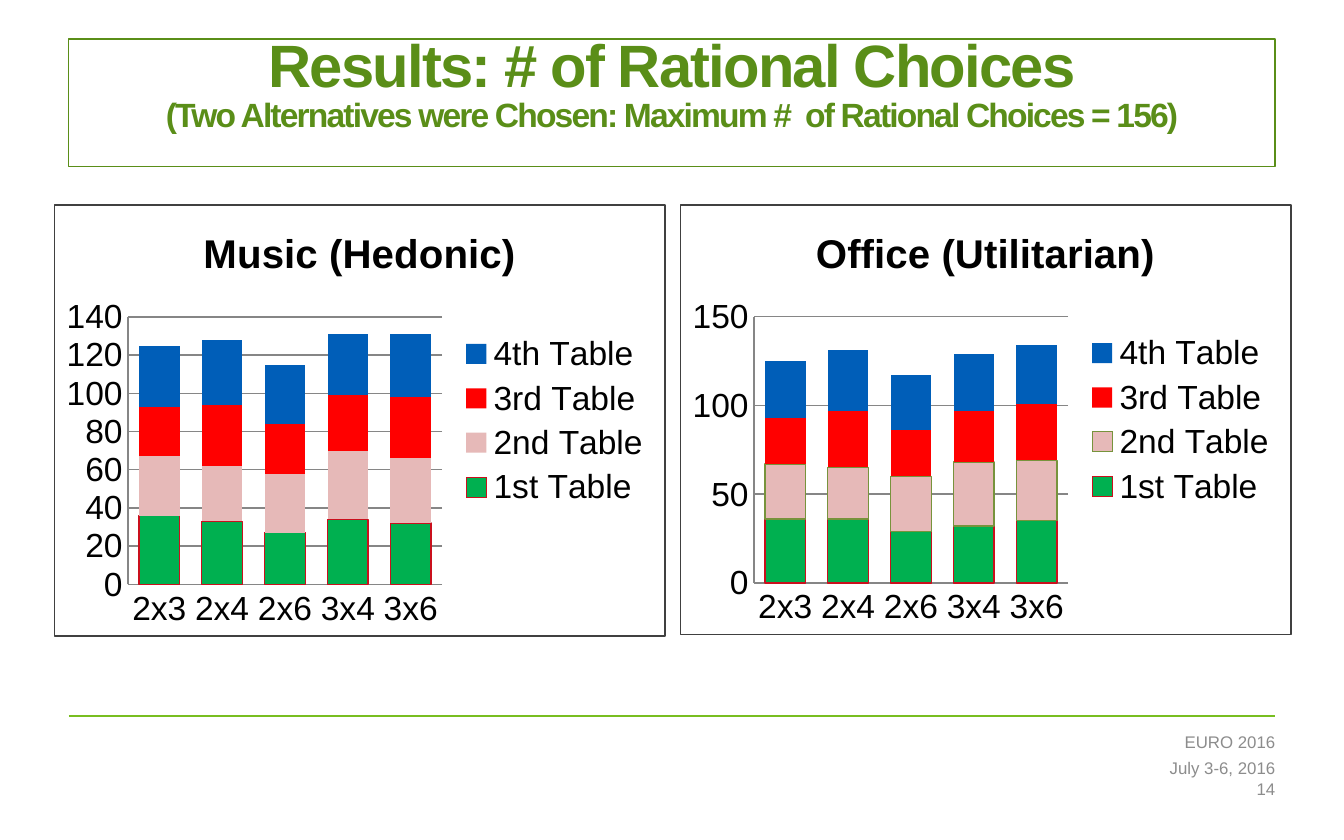
from lxml import etree
from pptx import Presentation
from pptx.chart.data import CategoryChartData
from pptx.dml.color import RGBColor
from pptx.enum.chart import XL_CHART_TYPE, XL_LEGEND_POSITION, XL_TICK_MARK
from pptx.enum.shapes import MSO_CONNECTOR
from pptx.enum.text import MSO_ANCHOR, MSO_AUTO_SIZE, PP_ALIGN
from pptx.oxml import parse_xml
from pptx.oxml.ns import nsdecls, qn
from pptx.util import Cm, Pt

STACKED = XL_CHART_TYPE.COLUMN_STACKED
LEGEND_RIGHT = XL_LEGEND_POSITION.RIGHT
NO_TICK = XL_TICK_MARK.NONE
STRAIGHT = MSO_CONNECTOR.STRAIGHT
TOP, MIDDLE = MSO_ANCHOR.TOP, MSO_ANCHOR.MIDDLE
NO_FIT = MSO_AUTO_SIZE.NONE
CENTER, RIGHT = PP_ALIGN.CENTER, PP_ALIGN.RIGHT

FONT = "Arial"
COLORS = {
    "title": "5A8E18", "rule": "78BE20", "footer": "8C8C8C", "text": "000000",
    "border": "404040", "grid": "868686", "first": "00B050", "second": "E6B9B8",
    "third": "FF0000", "fourth": "005EB8", "first_line": "CA101D",
    "second_line": "77933C",
}
SIZES = ["2x3", "2x4", "2x6", "3x4", "3x6"]
# The later three tables gave the same counts for both products
LATER_TABLES = [
    ("2nd Table", [31, 29, 31, 36, 34], "second"),
    ("3rd Table", [26, 32, 26, 29, 32], "third"),
    ("4th Table", [32, 34, 31, 32, 33], "fourth"),
]


def color(name):
    return RGBColor.from_string(COLORS[name])


def style_font(font, size, color_name, bold=False):
    font.name = FONT
    font.size = Pt(size)
    font.bold = bold
    font.color.rgb = color(color_name)


def style_line(line, color_name, width=0.75):
    line.color.rgb = color(color_name)
    line.width = Pt(width)


def add_title(slide, left, top, width, height):
    title = slide.shapes.title
    title.left, title.top = Cm(left), Cm(top)
    title.width, title.height = Cm(width), Cm(height)
    style_line(title.line, "title")
    frame = title.text_frame
    frame.auto_size = NO_FIT
    frame.word_wrap = True
    frame.vertical_anchor = TOP
    frame.margin_left = frame.margin_right = 0
    frame.margin_top = frame.margin_bottom = 0
    paragraph = frame.paragraphs[0]
    paragraph.alignment = CENTER
    paragraph.line_spacing = 0.85
    lines = [("Results: # of Rational Choices", 32),
             ("(Two Alternatives were Chosen: Maximum #  of Rational Choices = 156)", 18)]
    for index, (text, size) in enumerate(lines):
        if index:
            paragraph.add_line_break()
        run = paragraph.add_run()
        run.text = text
        style_font(run.font, size, "title", bold=True)
        run.font._element.set("spc", "-100")


def set_plot_area(chart, x, y, width, height):
    """Fix the inner plot area, as fractions of the chart."""
    plot_area = chart._chartSpace.chart.plotArea
    for old in plot_area.findall(qn("c:layout")):
        plot_area.remove(old)
    layout = etree.Element(qn("c:layout"))
    manual = etree.SubElement(layout, qn("c:manualLayout"))
    settings = [("layoutTarget", "inner"), ("xMode", "edge"), ("yMode", "edge"),
                ("x", x), ("y", y), ("w", width), ("h", height)]
    for tag, value in settings:
        etree.SubElement(manual, qn(f"c:{tag}")).set("val", str(value))
    plot_area.insert(0, layout)


def add_border(chart):
    border = parse_xml(
        f'<c:spPr {nsdecls("c", "a")}><a:solidFill><a:srgbClr val="FFFFFF"/></a:solidFill>'
        f'<a:ln w="{Pt(0.75)}"><a:solidFill><a:srgbClr val="{COLORS["border"]}"/>'
        '</a:solidFill></a:ln></c:spPr>')
    chart._chartSpace.chart.addnext(border)


def add_choice_chart(slide, left, top, width, height, title, first_table,
                     maximum, step, outlines):
    data = CategoryChartData()
    data.categories = SIZES
    tables = [("1st Table", first_table, "first")] + LATER_TABLES
    for name, values, _ in tables:
        data.add_series(name, values)
    chart = slide.shapes.add_chart(
        STACKED, Cm(left), Cm(top), Cm(width), Cm(height), data).chart
    style_font(chart.font, 18, "text")

    # Title and legend
    chart.has_title = True
    run = chart.chart_title.text_frame.paragraphs[0].add_run()
    run.text = title
    style_font(run.font, 21.6, "text", bold=True)
    chart.chart_title.include_in_layout = False
    chart.has_legend = True
    chart.legend.position = LEGEND_RIGHT
    chart.legend.include_in_layout = False

    # Axes
    for axis in (chart.category_axis, chart.value_axis):
        axis.major_tick_mark = axis.minor_tick_mark = NO_TICK
        style_line(axis.format.line, "grid")
    value_axis = chart.value_axis
    value_axis.minimum_scale, value_axis.maximum_scale = 0, maximum
    value_axis.major_unit = step
    value_axis.has_major_gridlines = True
    style_line(value_axis.major_gridlines.format.line, "grid")

    # Columns
    plot = chart.plots[0]
    plot.gap_width, plot.overlap = 55, 100
    plot.vary_by_categories = False
    for series, (_, _, fill) in zip(plot.series, tables):
        series.format.fill.solid()
        series.format.fill.fore_color.rgb = color(fill)
        if fill in outlines:
            style_line(series.format.line, f"{fill}_line")
        else:
            series.format.line.fill.background()

    set_plot_area(chart, 0.12, 0.26, 0.515, 0.62)
    add_border(chart)


def add_footer(slide, left, top, width):
    # Rule above the footer
    rule = slide.shapes.add_connector(
        STRAIGHT, Cm(left), Cm(top), Cm(left + width), Cm(top))
    style_line(rule.line, "rule", 1)
    etree.SubElement(rule._element.spPr, qn("a:effectLst"))

    # Event, date and slide number, stacked at the right
    text_width = 10.06
    line_top = top + 0.2
    for text, height in [("EURO 2016", 0.56), ("July 3-6, 2016", 0.43), ("14", 0.38)]:
        box = slide.shapes.add_textbox(
            Cm(left + width - text_width), Cm(line_top), Cm(text_width), Cm(height))
        frame = box.text_frame
        frame.word_wrap = True
        frame.vertical_anchor = MIDDLE
        frame.margin_right = 0
        paragraph = frame.paragraphs[0]
        paragraph.alignment = RIGHT
        run = paragraph.add_run()
        run.text = text
        style_font(run.font, 9, "footer")
        line_top += height


def main():
    presentation = Presentation()
    presentation.slide_width, presentation.slide_height = Cm(25.4), Cm(15.88)
    slide = presentation.slides.add_slide(presentation.slide_layouts[5])
    add_title(slide, 1.3, 0.74, 22.8, 2.41)
    add_choice_chart(slide, 1.02, 3.86, 11.56, 8.18, "Music (Hedonic)",
                     [36, 33, 27, 34, 32], 140, 20, ["first"])
    add_choice_chart(slide, 12.85, 3.86, 11.56, 8.15, "Office (Utilitarian)",
                     [36, 36, 29, 32, 35], 150, 50, ["first", "second"])
    add_footer(slide, 1.3, 13.54, 22.8)
    presentation.save("out.pptx")


if __name__ == "__main__":
    main()
